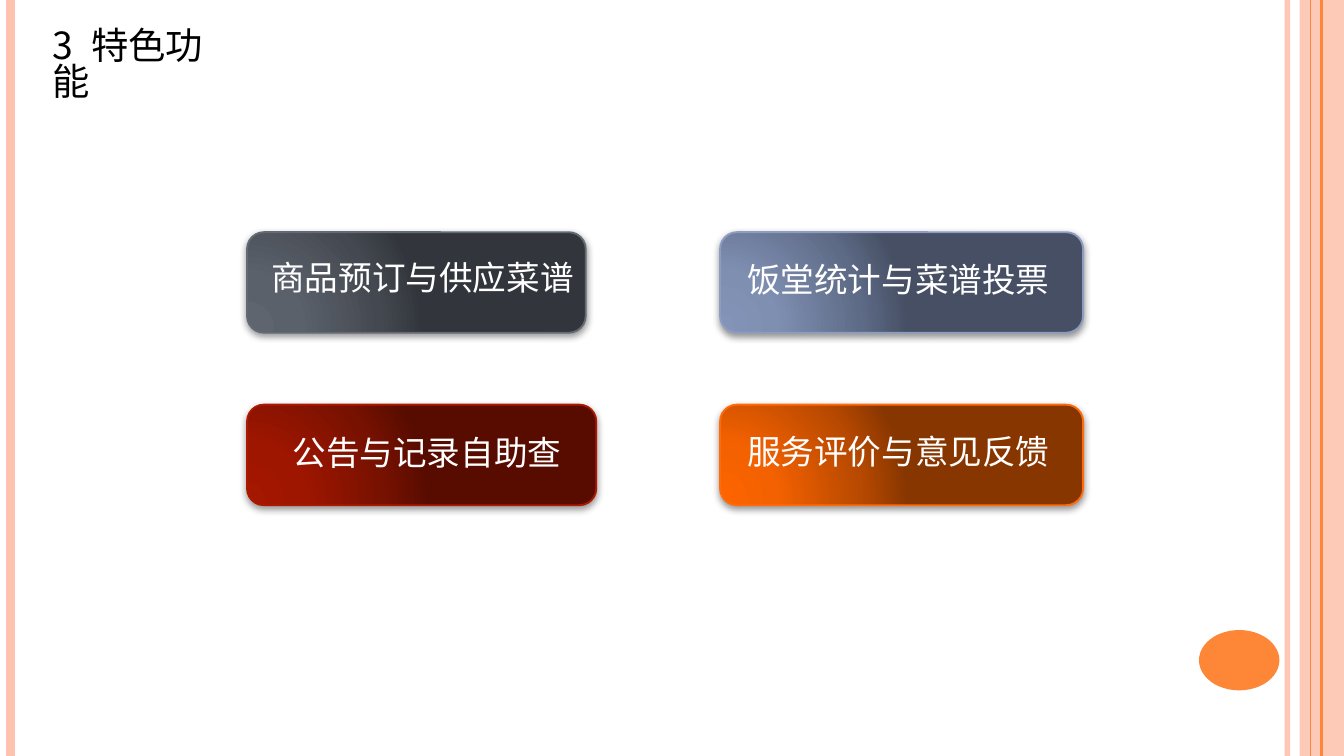
from lxml import etree
from pptx import Presentation
from pptx.dml.color import RGBColor
from pptx.enum.shapes import MSO_CONNECTOR, MSO_SHAPE
from pptx.enum.text import MSO_ANCHOR, MSO_AUTO_SIZE, PP_ALIGN
from pptx.oxml import parse_xml
from pptx.oxml.ns import nsdecls, qn
from pptx.util import Cm, Pt

FONT = "Noto Sans CJK SC"
PEACH = RGBColor(0xFE, 0xC3, 0xAE)
ORANGE = RGBColor(0xFE, 0x86, 0x37)
BLACK = RGBColor(0x00, 0x00, 0x00)
WHITE = RGBColor(0xFF, 0xFF, 0xFF)


def format_run(r, size, color):
    for name, value in {"name": FONT, "size": Pt(size), "bold": False}.items():
        setattr(r.font, name, value)
    r.font.color.rgb = color
    etree.SubElement(r.font._element, qn("a:ea"), typeface=FONT)


def set_alpha(sp, percent):
    color = next(sp._element.spPr.iter(qn("a:srgbClr")))
    etree.SubElement(color, qn("a:alpha"), val=str(percent * 1000))


prs = Presentation()
prs.slide_width, prs.slide_height = Cm(25.4), Cm(14.29)
s = prs.slides.add_slide(prs.slide_layouts[5])

# Side band and page-number disc
for shape, box, color, alpha in [
    (MSO_SHAPE.RECTANGLE, (24.56, 0, 0.84, 14.29), PEACH, 87),
    (MSO_SHAPE.OVAL, (22.66, 11.91, 1.52, 1.14), ORANGE, 100),
]:
    sp = s.shapes.add_shape(shape, *[Cm(v) for v in box])
    sp.shadow.inherit = False
    sp.fill.solid()
    sp.fill.fore_color.rgb = color
    sp.line.fill.background()
    set_alpha(sp, alpha)

# Vertical rules
for x, color, width, alpha in [
    (24.33, PEACH, 3, 93),
    (0.2, PEACH, 4.5, 100),
    (24.97, ORANGE, 1.5, 100),
    (24.77, ORANGE, 0.75, 100),
]:
    rule = s.shapes.add_connector(MSO_CONNECTOR.STRAIGHT, Cm(x), 0, Cm(x), prs.slide_height)
    rule.line.color.rgb = color
    rule.line.width = Pt(width)
    set_alpha(rule, alpha)
    etree.SubElement(rule._element.spPr, qn("a:effectLst"))

# Title
title = s.shapes.title
title.left, title.top, title.width, title.height = Cm(0.74), Cm(0.36), Cm(3.94), Cm(1.12)
tf = title.text_frame
for name, value in {
    "word_wrap": True,
    "auto_size": MSO_AUTO_SIZE.NONE,
    "vertical_anchor": MSO_ANCHOR.TOP,
    "margin_top": Cm(0.2),
}.items():
    setattr(tf, name, value)
p = tf.paragraphs[0]
p.alignment = PP_ALIGN.LEFT
p.line_spacing = 0.82
for text, spacing in [("3 ", 250), ("特色功能", 0)]:
    r = p.add_run()
    r.text = text
    format_run(r, 20, BLACK)
    r.font._element.set("spc", str(spacing))  # widens the gap after the number

# Feature buttons: left, top, width, gradient, outline, label, label left/top/width
STOPS = (0, 30, 75, 100)
BUTTONS = [
    (13.61, 7.65, 6.86, ("FD6400", "F46100", "B74900", "873600"), "FF6B0A",
     "服务评价与意见反馈", (13.87, 8.08, 6.6)),
    (4.67, 7.65, 6.6, ("A41700", "9F1600", "771100", "580C00"), "AC1800",
     "公告与记录自助查", (5.28, 8.1, 5.65)),
    (13.61, 4.39, 6.86, ("8494B9", "7F8FB2", "5E6B87", "464F64"), "8D9CBF",
     "饭堂统计与菜谱投票", (13.87, 4.83, 7.01)),
    (4.67, 4.39, 6.4, ("5E656F", "5B616B", "444951", "32363C"), "636A74",
     "商品预订与供应菜谱", (4.88, 4.78, 6.6)),
]
for left, top, width, colors, outline, label, (text_left, text_top, text_width) in BUTTONS:
    group = s.shapes.add_group_shape()
    sp = group.shapes.add_shape(
        MSO_SHAPE.ROUNDED_RECTANGLE, Cm(left), Cm(top), Cm(width), Cm(1.9))
    sp.line.color.rgb = RGBColor.from_string(outline)
    sp.line.width = Pt(1)

    # Radial gradient and soft shadow
    stops = "".join(
        f'<a:gs pos="{pos * 1000}"><a:srgbClr val="{color}"/></a:gs>'
        for pos, color in zip(STOPS, colors))
    spPr = sp._element.spPr
    spPr.find(qn("a:prstGeom")).addnext(parse_xml(
        f'<a:gradFill {nsdecls("a")} rotWithShape="1"><a:gsLst>{stops}</a:gsLst>'
        '<a:path path="circle"><a:fillToRect l="5000" t="100000" r="120000" b="10000"/>'
        '</a:path></a:gradFill>'))
    spPr.append(parse_xml(
        f'<a:effectLst {nsdecls("a")}><a:outerShdw blurRad="{Pt(4)}" dist="{Pt(1.6)}" '
        'dir="5400000" rotWithShape="0"><a:srgbClr val="000000"><a:alpha val="42000"/>'
        '</a:srgbClr></a:outerShdw></a:effectLst>'))

    # Label
    tb = group.shapes.add_textbox(Cm(text_left), Cm(text_top), Cm(text_width), Cm(1.02))
    tf = tb.text_frame
    tf.word_wrap = True
    tf.margin_top = Cm(0.07)
    r = tf.paragraphs[0].add_run()
    r.text = label
    format_run(r, 18, WHITE)

prs.save("out.pptx")
